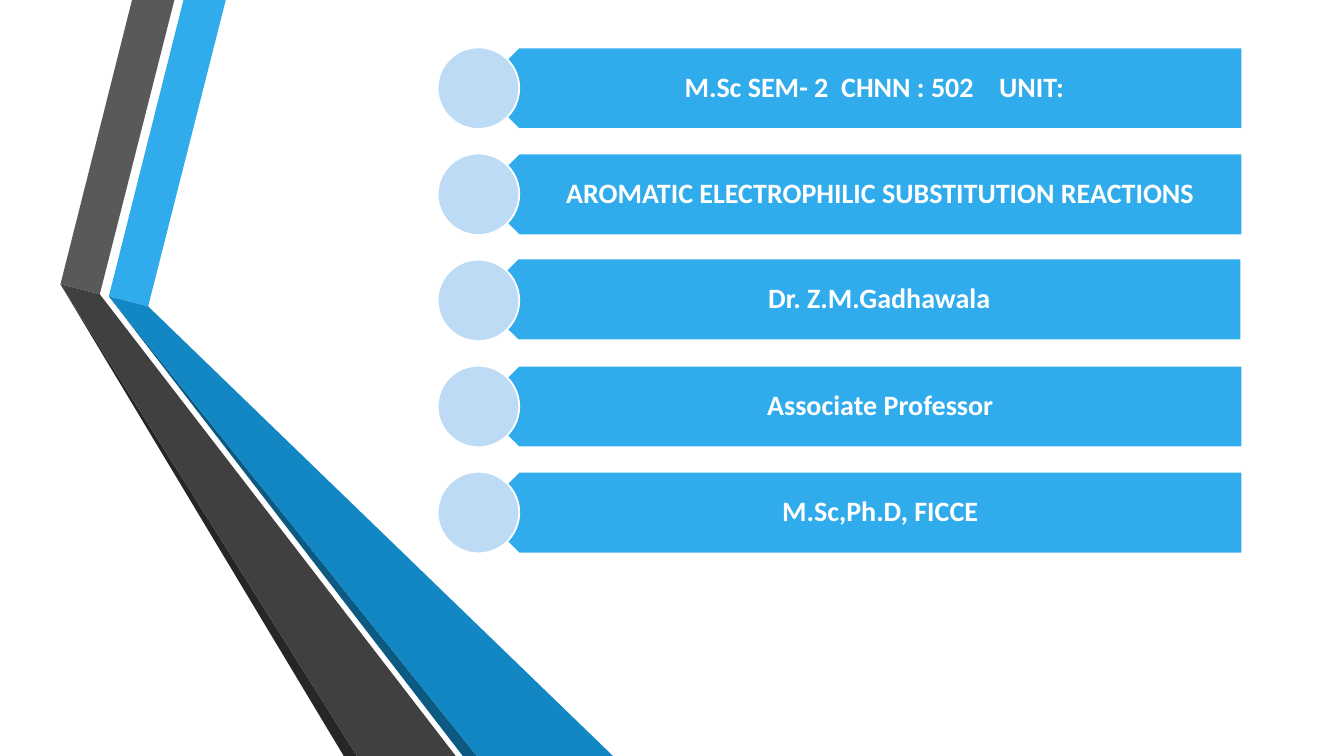
from pptx import Presentation
from pptx.dml.color import RGBColor
from pptx.enum.shapes import MSO_SHAPE
from pptx.enum.text import MSO_ANCHOR, PP_ALIGN
from pptx.util import Inches, Pt

SKY, PALE, WHITE = "30ACEC", "BEDBF6", "FFFFFF"
BAR_HEIGHT = 0.81
BAR_PITCH = 1.0525
FIRST_TOP = 0.47

RIBBONS = [
    (SKY, [(1.08, 2.94), (1.47, 3.04), (2.24, 0), (1.82, 0)]),
    ("595959", [(0.99, 2.92), (1.73, 0), (1.31, 0), (0.6, 2.82)]),
    ("262626", [(0.6, 2.82), (3.41, 7.5), (3.54, 7.5)]),
    ("0C5A82", [(4.73, 7.5), (1.08, 2.94), (4.59, 7.5)]),
    ("1287C3", [(1.08, 2.94), (4.73, 7.5), (6.08, 7.5), (1.47, 3.04)]),
    ("404040", [(4.52, 7.5), (1.06, 3.01), (0.99, 2.92), (0.6, 2.82), (3.54, 7.5)]),
]

BARS = [
    {"pieces": [("M.Sc SEM- 2", 4.5), (" ", 4.5), ("CHNN : 502", 0), (" ", 13.5), ("UNIT:", 0)],
     "right_inset": 0.28},
    {"pieces": [("AROMATIC ELECTROPHILIC SUBSTITUTION REACTIONS", 0)]},
    {"pieces": [("Dr. Z.M.Gadhawala", 0)], "shift_x": -0.01, "shift_y": -0.01},
    {"pieces": [("Associate Professor", 0)]},
    {"pieces": [("M.Sc,Ph.D, FICCE", 0)]},
]
BARS[0]["pieces"][0] = ("M.Sc SEM- 2", 0)


def color(value):
    """Turn a hex string into a colour."""
    return RGBColor.from_string(value)


def paint(shape, fill, line=None):
    """Give a shape a plain fill and an optional outline."""
    shape.shadow.inherit = False
    shape.fill.solid()
    shape.fill.fore_color.rgb = color(fill)
    if line:
        shape.line.color.rgb = color(line)
        shape.line.width = Pt(1.25)
    else:
        shape.line.fill.background()


def add_ribbon(slide, fill, points):
    """Draw one flat facet of the folded ribbons."""
    corners = [(Inches(x), Inches(y)) for x, y in points]
    builder = slide.shapes.build_freeform(*corners[0])
    builder.add_line_segments(corners[1:], close=True)
    paint(builder.convert_to_shape(), fill)


def add_preset(slide, kind, left, top, width, fill):
    """Draw a preset shape of bar height with a white outline."""
    shape = slide.shapes.add_shape(
        kind, Inches(left), Inches(top), Inches(width), Inches(BAR_HEIGHT))
    paint(shape, fill, WHITE)
    return shape


def add_text(slide, pieces, left, top, width, size=20, font="Calibri",
             fill=WHITE, bold=True, right_inset=0.16):
    """Write a centred line from pieces of text and their letter spacing."""
    box = slide.shapes.add_textbox(
        Inches(left), Inches(top), Inches(width), Inches(BAR_HEIGHT))
    frame = box.text_frame
    frame.word_wrap = True
    frame.vertical_anchor = MSO_ANCHOR.MIDDLE
    frame.margin_left, frame.margin_right = Inches(0.36), Inches(right_inset)
    frame.margin_top = frame.margin_bottom = Inches(0.08)
    paragraph = frame.paragraphs[0]
    paragraph.alignment = PP_ALIGN.CENTER
    paragraph.line_spacing = 0.9
    for text, spacing in pieces:
        run = paragraph.add_run()
        run.text = text
        run.font.size, run.font.name, run.font.bold = Pt(size), font, bold
        run.font.color.rgb = color(fill)
        if spacing:
            run.font._element.set("spc", str(int(spacing * 100)))


def add_bar(slide, top, pieces, shift_x=0, shift_y=0, **text_format):
    """Draw a pointed bar with its text and the circle at its tip."""
    left, bar_top = 4.74 + shift_x, top + shift_y
    bar = add_preset(slide, MSO_SHAPE.PENTAGON, left, bar_top, 7.58, SKY)
    bar.rotation = 180
    add_text(slide, pieces, left + 0.2, bar_top, 7.38, **text_format)
    add_preset(slide, MSO_SHAPE.OVAL, 4.34, top, BAR_HEIGHT, PALE)


def main():
    """Build the title slide."""
    presentation = Presentation()
    presentation.slide_width = Inches(13.33)
    presentation.slide_height = Inches(7.5)
    slide = presentation.slides.add_slide(presentation.slide_layouts[6])
    for fill, points in RIBBONS:
        add_ribbon(slide, fill, points)
    for index, bar in enumerate(BARS):
        add_bar(slide, FIRST_TOP + index * BAR_PITCH, **bar)
    presentation.save("out.pptx")


if __name__ == "__main__":
    main()
